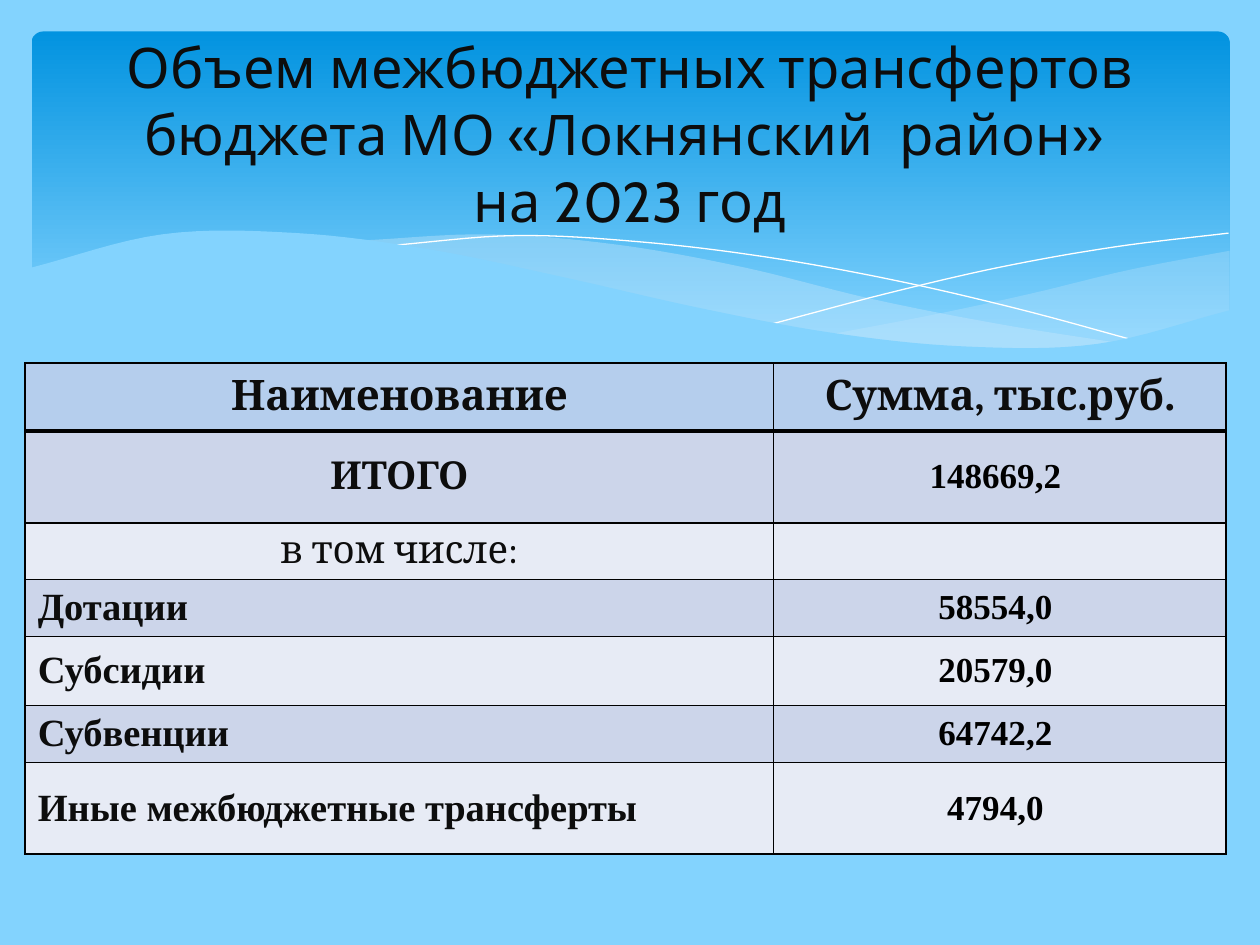
from lxml import etree
from pptx import Presentation
from pptx.dml.color import RGBColor
from pptx.enum.shapes import MSO_SHAPE
from pptx.enum.text import MSO_ANCHOR, PP_ALIGN
from pptx.oxml.ns import qn
from pptx.util import Inches, Pt

CENTER, LEFT = PP_ALIGN.CENTER, PP_ALIGN.LEFT
MIDDLE = MSO_ANCHOR.MIDDLE
ROUNDED = MSO_SHAPE.ROUNDED_RECTANGLE
TITLE_FONT, SERIF, ROMAN = "Cabin", "Cambria", "Times New Roman"
COLORS = {
    "sky": "83D3FE", "blue": "0293E0", "mist": "C6E7FC", "white": "FFFFFF",
    "ink": "0D0D0D", "black": "000000",
    "header": "B5CEED", "odd": "CCD5EA", "even": "E7EBF5",
}


def smooth_curve(left, right, heights, steps=8):
    """Catmull-Rom curve through heights spaced evenly from left to right."""
    gap = (right - left) / (len(heights) - 1)
    before = 2 * heights[0] - heights[1]
    after = 2 * heights[-1] - heights[-2]
    knots = [before, *heights, after]
    points = []
    for index in range(len(heights) - 1):
        a, b, c, d = knots[index:index + 4]
        for step in range(steps):
            t = step / steps
            y = b + t * (c - a) / 2 + t**2 * (a - 2.5 * b + 2 * c - d / 2) \
                + t**3 * (3 * (b - c) + d - a) / 2
            points.append((left + gap * (index + t), y))
    return points + [(right, heights[-1])]


def add_span(para, text, font, size, color, bold=False):
    span = para.add_run()
    span.text = text
    span.font.name = font
    span.font.size = Pt(size)
    span.font.bold = bold
    span.font.color.rgb = RGBColor.from_string(COLORS[color])


deck = Presentation()
deck.slide_width, deck.slide_height = Inches(10), Inches(7.5)
page = deck.slides.add_slide(deck.slide_layouts[6])
page.background.fill.solid()
page.background.fill.fore_color.rgb = RGBColor.from_string(COLORS["sky"])

banner = page.shapes.add_shape(ROUNDED, Inches(0.25), Inches(0.25), Inches(9.51), Inches(2.7))
banner.adjustments[0] = 0.034
banner.shadow.inherit = False
banner.line.fill.background()
banner.fill.gradient()
banner.fill.gradient_angle = 270
for stop, (position, color) in zip(banner.fill.gradient_stops, [(0, "blue"), (0.9, "sky")]):
    stop.position = position
    stop.color.rgb = RGBColor.from_string(COLORS[color])

right_top = smooth_curve(6.61, 9.76, [2.65, 2.5, 2.33, 2.14, 1.99])
right_bottom = smooth_curve(6.61, 9.76, [2.65, 2.75, 2.78, 2.7, 2.47])
middle_top = smooth_curve(2.86, 8.93, [1.91, 1.86, 1.94, 2.12, 2.37, 2.57, 2.73])
middle_bottom = smooth_curve(2.86, 8.93, [1.91, 2.08, 2.31, 2.53, 2.7, 2.78, 2.73])
falling_curve = smooth_curve(3.09, 9.07, [1.95, 1.87, 1.92, 2.04, 2.22, 2.45, 2.72])
rising_curve = smooth_curve(6.13, 9.75, [2.57, 2.33, 2.12, 1.96, 1.85])
front_top = smooth_curve(
    0.23, 9.77, [2.13, 1.86, 1.85, 1.98, 2.2, 2.44, 2.64, 2.75, 2.73, 2.46])
front_bottom = [(0.23, 3.29), (9.77, 3.29)]

waves = [
    (right_top + right_bottom[::-1], "mist", 29),
    (middle_top + middle_bottom[::-1], "mist", 40),
    (falling_curve, None, 100),
    (rising_curve, None, 100),
    (front_top + front_bottom[::-1], "sky", 100),
]
for points, color, opacity in waves:
    corners = [(Inches(x), Inches(y)) for x, y in points]
    builder = page.shapes.build_freeform(*corners[0])
    builder.add_line_segments(corners[1:], close=color is not None)
    wave = builder.convert_to_shape()
    wave.shadow.inherit = False
    if color is None:
        wave.fill.background()
        wave.line.color.rgb = RGBColor.from_string(COLORS["white"])
        wave.line.width = Pt(0)
        continue
    wave.line.fill.background()
    wave.fill.solid()
    wave.fill.fore_color.rgb = RGBColor.from_string(COLORS[color])
    if opacity < 100:
        tint = wave._element.spPr.find(qn("a:solidFill"))[0]
        etree.SubElement(tint, qn("a:alpha"), val=str(opacity * 1000))

title = page.shapes.add_textbox(Inches(0.5), Inches(0.37), Inches(9), Inches(1.37))
title.text_frame.word_wrap = True
title.text_frame.vertical_anchor = MIDDLE
para = title.text_frame.paragraphs[0]
para.alignment = CENTER
para.line_spacing = 1.0
add_span(para, "Объем межбюджетных трансфертов бюджета МО «Локнянский  район» ",
         TITLE_FONT, 32, "ink")
para.add_line_break()
add_span(para, "на 2023 год", TITLE_FONT, 32, "ink")

rows = [
    (0.54, "Наименование", SERIF, 24, True, CENTER, "Сумма, тыс.руб"),
    (0.73, "ИТОГО", SERIF, 22, True, CENTER, "148669,2 "),
    (0.45, "в том числе:", SERIF, 22, False, CENTER, ""),
    (0.45, "Дотации", ROMAN, 22, True, LEFT, "58554,0 "),
    (0.55, "Субсидии", ROMAN, 22, True, LEFT, "20579,0 "),
    (0.45, "Субвенции", ROMAN, 22, True, LEFT, "64742,2 "),
    (0.73, "Иные межбюджетные трансферты", ROMAN, 22, True, LEFT, "4794,0 "),
]
total_height = sum(row[0] for row in rows)
table = page.shapes.add_table(
    len(rows), 2, Inches(0.2), Inches(2.88), Inches(9.53), Inches(total_height)).table
table.columns[0].width, table.columns[1].width = Inches(5.94), Inches(3.59)

for index, (height, name, font, size, bold, align, amount) in enumerate(rows):
    table.rows[index].height = Inches(height)
    shade = "header" if index == 0 else "odd" if index % 2 else "even"
    for cell in table.rows[index].cells:
        cell.vertical_anchor = MIDDLE
        cell.margin_top = cell.margin_bottom = Inches(0.04)
        for side in ("lnL", "lnR", "lnT", "lnB"):
            width = 3 if (index, side) in ((0, "lnB"), (1, "lnT")) else 1
            border = etree.SubElement(
                cell._tc.get_or_add_tcPr(), qn("a:" + side), w=str(Pt(width)))
            paint = etree.SubElement(border, qn("a:solidFill"))
            etree.SubElement(paint, qn("a:srgbClr"), val=COLORS["black"])
        cell.fill.solid()
        cell.fill.fore_color.rgb = RGBColor.from_string(COLORS[shade])
    name_para, amount_para = [
        cell.text_frame.paragraphs[0] for cell in table.rows[index].cells]
    name_para.alignment, amount_para.alignment = align, CENTER
    add_span(name_para, name, font, size, "ink", bold)
    if index == 0:
        add_span(amount_para, amount, SERIF, 24, "ink", True)
        add_span(amount_para, ".", ROMAN, 24, "ink", True)
    elif amount:
        add_span(amount_para, amount, ROMAN, 20, "black", True)

deck.save("out.pptx")
